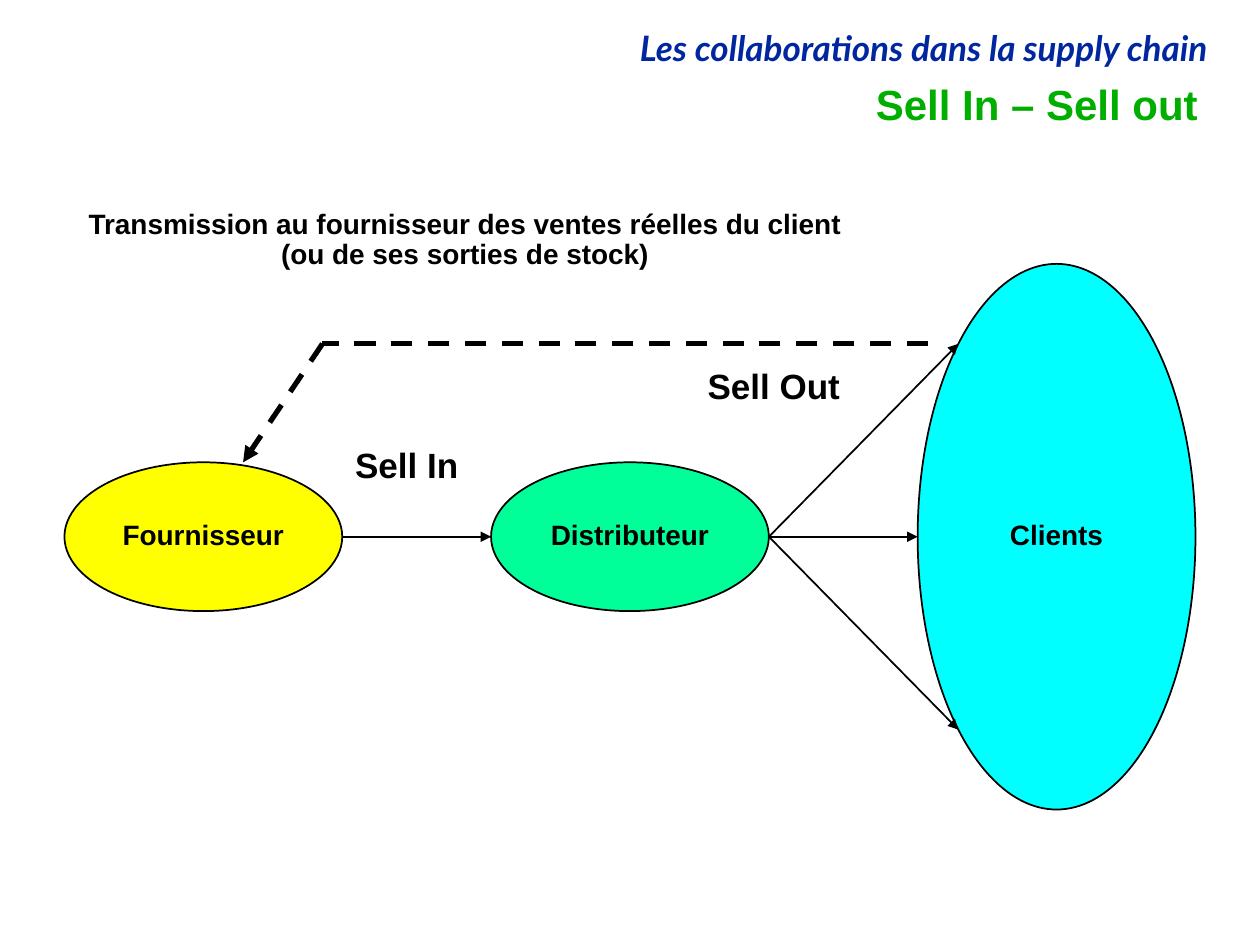
from dataclasses import dataclass
from math import sqrt

from lxml import etree
from pptx import Presentation
from pptx.dml.color import RGBColor
from pptx.enum import dml, shapes, text
from pptx.oxml.ns import qn
from pptx.util import Cm, Pt


@dataclass(frozen=True)
class Theme:
    body_font: str = "Arial"
    header_font: str = "Lato"
    ink: str = "000000"
    header: str = "00279F"
    title: str = "00AE00"
    supplier: str = "FFFF00"
    distributor: str = "00FF99"
    customers: str = "00FFFF"
    small: int = 16
    medium: int = 20
    large: int = 24
    thin: int = 1
    thick: int = 3


THEME = Theme()


@dataclass(frozen=True)
class Label:
    words: str
    left: float
    top: float
    width: float
    height: float
    size: int
    color: str = THEME.ink
    font: str = THEME.body_font
    italic: bool = False
    align: text.PP_ALIGN = text.PP_ALIGN.CENTER
    anchor: text.MSO_ANCHOR = text.MSO_ANCHOR.TOP
    wrap: bool = False


@dataclass(frozen=True)
class Actor:
    """An ellipse of the supply chain, placed by its centre."""
    name: str
    x: float
    y: float
    width: float
    height: float
    fill: str

    @property
    def left(self) -> float:
        return self.x - self.width / 2

    @property
    def right(self) -> float:
        return self.x + self.width / 2

    @property
    def top(self) -> float:
        return self.y - self.height / 2


@dataclass(frozen=True)
class Flow:
    start: tuple[float, float]
    end: tuple[float, float]
    width: int = THEME.thin
    dashed: bool = False
    arrow: bool = True


def write(frame, words: str, size: int, color: str = THEME.ink,
          font: str = THEME.body_font, italic: bool = False,
          align: text.PP_ALIGN = text.PP_ALIGN.CENTER) -> None:
    paragraph = frame.paragraphs[0]
    paragraph.text = words
    paragraph.alignment = align
    paragraph.line_spacing = 0.9
    paragraph.font.name = font
    paragraph.font.size = Pt(size)
    paragraph.font.bold = True
    paragraph.font.italic = italic
    paragraph.font.color.rgb = RGBColor.from_string(color)


def draw_label(slide, label: Label) -> None:
    box = slide.shapes.add_textbox(Cm(label.left), Cm(label.top),
                                   Cm(label.width), Cm(label.height))
    frame = box.text_frame
    frame.word_wrap = label.wrap
    frame.vertical_anchor = label.anchor
    write(frame, label.words, label.size, label.color, label.font,
          label.italic, label.align)


def draw_actor(slide, actor: Actor) -> None:
    ellipse = slide.shapes.add_shape(
        shapes.MSO_SHAPE.OVAL, Cm(actor.left), Cm(actor.top),
        Cm(actor.width), Cm(actor.height))
    ellipse.shadow.inherit = False
    ellipse.fill.solid()
    ellipse.fill.fore_color.rgb = RGBColor.from_string(actor.fill)
    ellipse.line.color.rgb = RGBColor.from_string(THEME.ink)
    ellipse.line.width = Pt(THEME.thin)
    ellipse.text_frame.word_wrap = False
    ellipse.text_frame.vertical_anchor = text.MSO_ANCHOR.MIDDLE
    write(ellipse.text_frame, actor.name, THEME.small)


def draw_flow(slide, flow: Flow) -> None:
    connector = slide.shapes.add_connector(
        shapes.MSO_CONNECTOR.STRAIGHT,
        *(Cm(length) for length in (*flow.start, *flow.end)))
    line = connector.line
    line.color.rgb = RGBColor.from_string(THEME.ink)
    line.width = Pt(flow.width)
    if flow.dashed:
        line.dash_style = dml.MSO_LINE.DASH
    properties = connector._element.spPr
    if flow.arrow:
        etree.SubElement(properties.find(qn("a:ln")), qn("a:tailEnd"),
                         type="triangle")
    etree.SubElement(properties, qn("a:effectLst"))


def main() -> None:
    presentation = Presentation()
    presentation.slide_width, presentation.slide_height = Cm(25.4), Cm(19.05)
    slide = presentation.slides.add_slide(presentation.slide_layouts[6])

    axis, first, pitch, width, height = 10.82, 4.1, 8.6, 5.6, 3.0
    supplier = Actor("Fournisseur", first, axis, width, height,
                     THEME.supplier)
    distributor = Actor("Distributeur", first + pitch, axis, width, height,
                        THEME.distributor)
    customers = Actor("Clients", first + 2 * pitch, axis, width, 11.0,
                      THEME.customers)

    # The outer deliveries reach the customers' ellipse at its 45° points.
    rim_x = customers.x - customers.width / 2 / sqrt(2)
    rim_rise = customers.height / 2 / sqrt(2)
    source = (distributor.right, axis)
    bend = (6.5, axis - rim_rise)
    flows = [
        Flow(source, (rim_x, axis - rim_rise)),
        Flow(source, (customers.left, axis)),
        Flow(source, (rim_x, axis + rim_rise)),
        Flow((supplier.right, axis), (distributor.left, axis)),
        Flow((18.7, bend[1]), bend, THEME.thick, dashed=True, arrow=False),
        Flow(bend, (4.9, supplier.top), THEME.thick, dashed=True),
    ]
    labels = [
        Label("Les collaborations dans la supply chain", 4.1, 0.5, 20.5, 1.02,
              THEME.medium, THEME.header, THEME.header_font, italic=True,
              align=text.PP_ALIGN.RIGHT, wrap=True),
        Label("Sell In – Sell out", 4.3, 1.52, 20.1, 1.27, THEME.large,
              THEME.title, align=text.PP_ALIGN.RIGHT,
              anchor=text.MSO_ANCHOR.MIDDLE, wrap=True),
        Label("Sell In", 6.9, 8.92, 2.6, 1.04, THEME.medium),
        Label("Sell Out", 14.0, 7.32, 3.2, 1.04, THEME.medium),
        Label("Transmission au fournisseur des ventes réelles du client\n"
              "(ou de ses sorties de stock)", 1.5, 4.11, 15.75, 1.47,
              THEME.small),
    ]

    for actor in (supplier, distributor, customers):
        draw_actor(slide, actor)
    for flow in flows:
        draw_flow(slide, flow)
    for label in labels:
        draw_label(slide, label)
    presentation.save("out.pptx")


if __name__ == "__main__":
    main()
